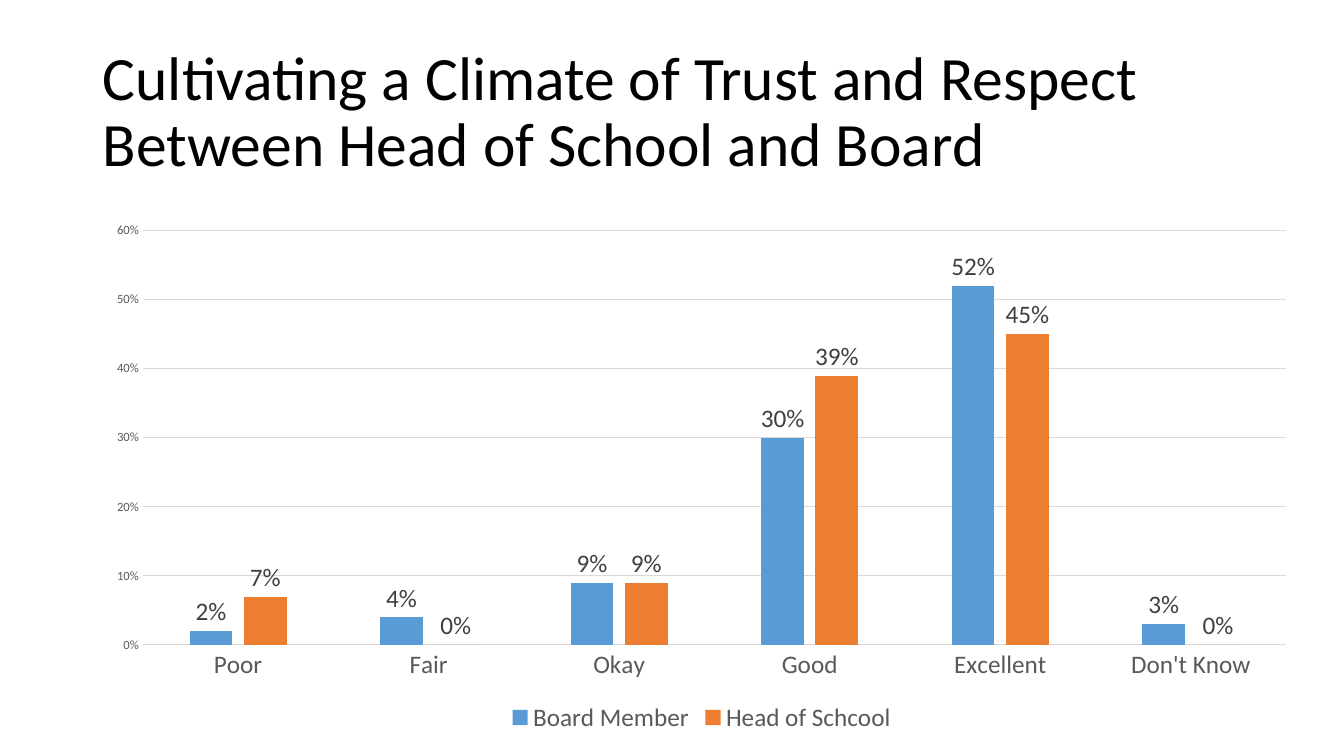
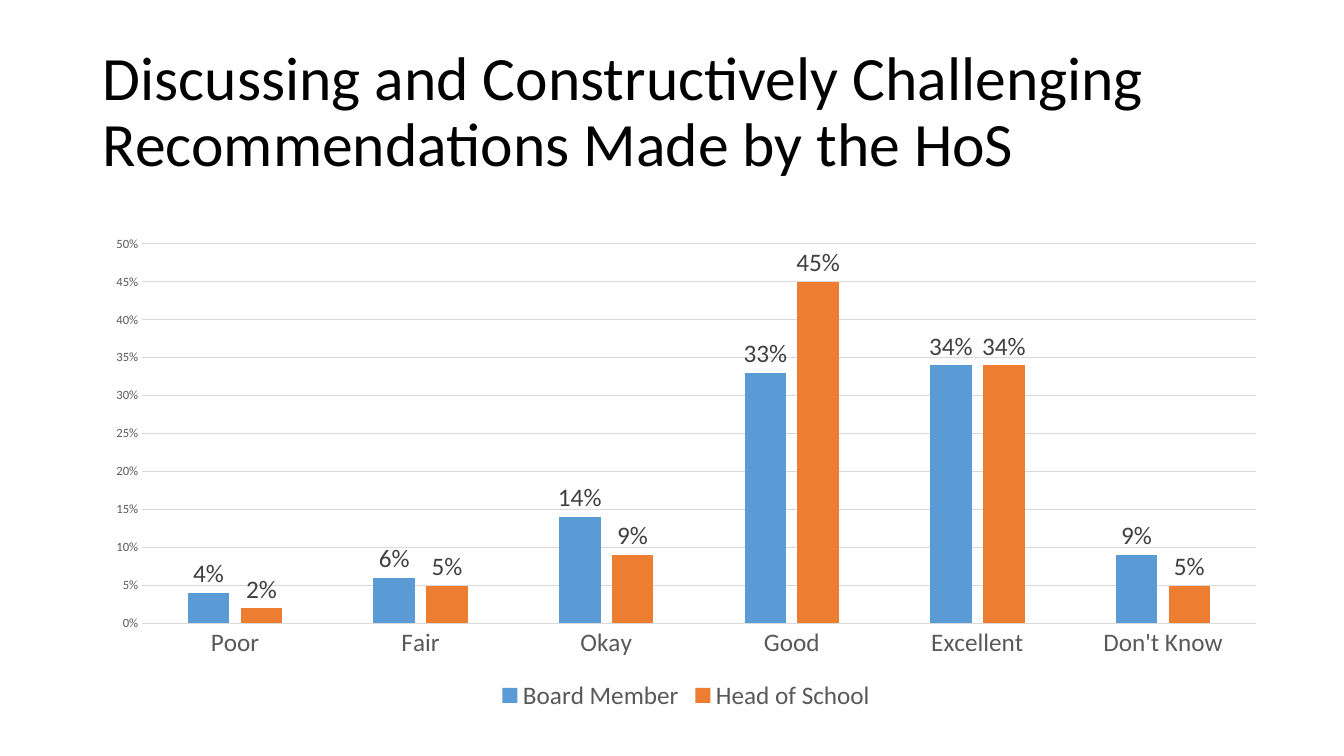
from pptx import Presentation
from pptx.chart.data import CategoryChartData
from pptx.dml.color import RGBColor
from pptx.enum.chart import XL_CHART_TYPE, XL_LABEL_POSITION, XL_LEGEND_POSITION, XL_TICK_MARK
from pptx.enum.text import MSO_ANCHOR, MSO_AUTO_SIZE, PP_ALIGN
from pptx.util import Inches, Pt

COLUMNS = XL_CHART_TYPE.COLUMN_CLUSTERED
OUTSIDE_END = XL_LABEL_POSITION.OUTSIDE_END
BOTTOM = XL_LEGEND_POSITION.BOTTOM
NO_TICK = XL_TICK_MARK.NONE
MIDDLE = MSO_ANCHOR.MIDDLE
NO_FIT = MSO_AUTO_SIZE.NONE
LEFT = PP_ALIGN.LEFT

TITLE_ONLY = 5
FONT = "Calibri"
BLACK, LABEL_GRAY, AXIS_GRAY, GRID_GRAY = "000000", "404040", "595959", "D9D9D9"
SERIES_COLORS = ("5B9BD5", "ED7D31")
RATINGS = ("Poor", "Fair", "Okay", "Good", "Excellent", "Don't Know")
TITLE_AREA = (6.9, 5.33, 86.25, 19.33)

SURVEYS = [
    {
        "title": "Cultivating a Climate of Trust and Respect Between Head of School and Board",
        "area": (6.9, 28.13, 90.6, 69.47),
        "answers": {
            "Board Member": (0.02, 0.04, 0.09, 0.3, 0.52, 0.03),
            "Head of Schcool": (0.07, 0, 0.09, 0.39, 0.45, 0),
        },
        "top": 0.6,
        "step": 0.1,
    },
    {
        "title": "Discussing and Constructively Challenging Recommendations Made by the HoS",
        "area": (6.9, 30, 88.3, 64.67),
        "answers": {
            "Board Member": (0.04, 0.06, 0.14, 0.33, 0.34, 0.09),
            "Head of School": (0.02, 0.05, 0.09, 0.45, 0.34, 0.05),
        },
        "top": 0.5,
        "step": 0.05,
    },
]


def color(code):
    """Turn a hex string into a colour."""
    return RGBColor.from_string(code)


def apply(target, **formats):
    """Set each named format value on the target."""
    for name, value in formats.items():
        setattr(target, name, value)


class SurveyDeck:
    """Hold the deck, its style and the current page."""

    def __init__(self):
        """Start an empty widescreen deck."""
        self.deck = Presentation()
        apply(self.deck, slide_width=Inches(13.33), slide_height=Inches(7.5))
        self.page = None

    def place(self, left, top, width, height):
        """Convert percentages of the page into lengths."""
        across, down = self.deck.slide_width / 100, self.deck.slide_height / 100
        return {
            "left": round(left * across),
            "top": round(top * down),
            "width": round(width * across),
            "height": round(height * down),
        }

    def style_font(self, font, size, code):
        """Give a font the deck's typeface, a size and a colour."""
        apply(font, name=FONT, size=Pt(size), bold=False)
        font.color.rgb = color(code)

    def style_line(self, line):
        """Draw a thin gray chart line."""
        line.width = Pt(0.75)
        line.color.rgb = color(GRID_GRAY)

    def add_page(self, title):
        """Add a page and fill its title placeholder."""
        self.page = self.deck.slides.add_slide(self.deck.slide_layouts[TITLE_ONLY])
        box = self.page.shapes.title
        apply(box, **self.place(*TITLE_AREA))
        frame = box.text_frame
        apply(frame, text=title, word_wrap=True, auto_size=NO_FIT, vertical_anchor=MIDDLE)
        para = frame.paragraphs[0]
        apply(para, alignment=LEFT, line_spacing=0.9)
        self.style_font(para.runs[0].font, 44, BLACK)

    def add_columns(self, area, answers, top, step):
        """Add a clustered column chart of the answers."""
        data = CategoryChartData(number_format="0%")
        data.categories = RATINGS
        for group, shares in answers.items():
            data.add_series(group, shares)
        place = self.place(*area)
        chart = self.page.shapes.add_chart(
            COLUMNS, place["left"], place["top"], place["width"], place["height"], data
        ).chart
        apply(chart, has_title=False, has_legend=True)
        self.style_font(chart.font, 10, BLACK)
        apply(chart.legend, position=BOTTOM, include_in_layout=False)
        self.style_font(chart.legend.font, 18, AXIS_GRAY)
        self.style_axes(chart, top, step)
        self.style_series(chart.plots[0])

    def style_axes(self, chart, top, step):
        """Format both axes and the gridlines."""
        for axis, size in ((chart.category_axis, 18), (chart.value_axis, 9)):
            apply(axis, major_tick_mark=NO_TICK, minor_tick_mark=NO_TICK)
            self.style_font(axis.tick_labels.font, size, AXIS_GRAY)
        self.style_line(chart.category_axis.format.line)
        values = chart.value_axis
        apply(values, minimum_scale=0, maximum_scale=top, major_unit=step, has_major_gridlines=True)
        apply(values.tick_labels, number_format="0%", number_format_is_linked=False)
        values.format.line.fill.background()
        self.style_line(values.major_gridlines.format.line)

    def style_series(self, plot):
        """Color the columns and label their values."""
        apply(plot, gap_width=219, overlap=-27, vary_by_categories=False)
        for series, code in zip(plot.series, SERIES_COLORS):
            series.invert_if_negative = False
            series.format.fill.solid()
            series.format.fill.fore_color.rgb = color(code)
            labels = series.data_labels
            apply(labels, show_value=True, position=OUTSIDE_END,
                  number_format="0%", number_format_is_linked=False)
            self.style_font(labels.font, 18, LABEL_GRAY)


def main():
    """Build and save the survey deck."""
    survey_deck = SurveyDeck()
    for survey in SURVEYS:
        survey_deck.add_page(survey["title"])
        survey_deck.add_columns(survey["area"], survey["answers"], survey["top"], survey["step"])
    survey_deck.deck.save("out.pptx")


if __name__ == "__main__":
    main()
